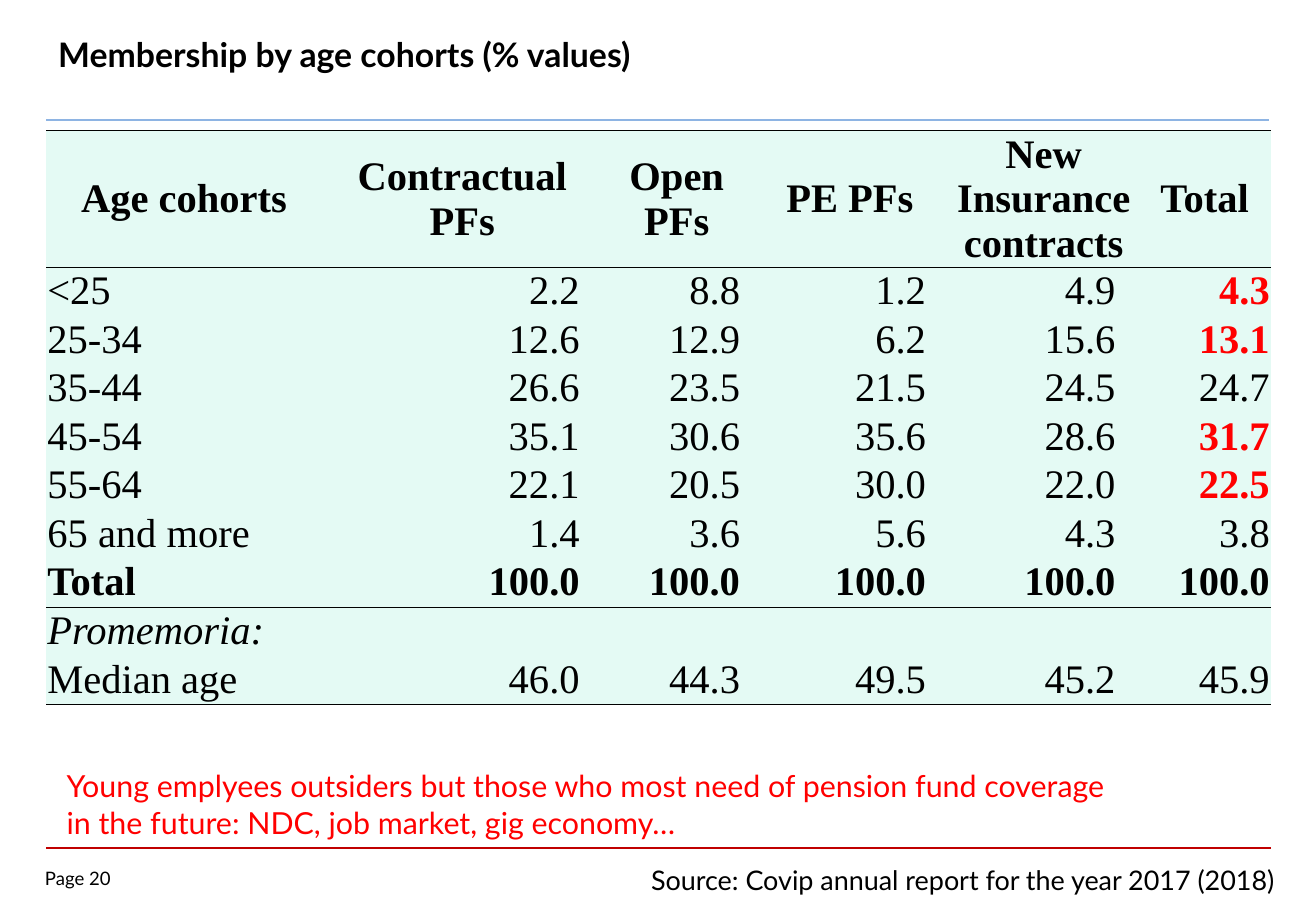
from dataclasses import dataclass

from lxml import etree
from pptx import Presentation
from pptx.dml.color import RGBColor
from pptx.enum import shapes, text
from pptx.oxml import ns
from pptx.util import Inches, Pt


@dataclass(frozen=True)
class Theme:
    """Colours, fonts and type sizes of the slide."""
    ink: str = "000000"
    accent: str = "FF0000"
    mint: str = "E4FAF4"
    top_rule: str = "8EB4E3"
    bottom_rule: str = "C00000"
    sans: str = "Lato"
    serif: str = "Times New Roman"
    title: int = 20
    table: int = 24
    note: int = 18
    source: int = 16
    page: int = 11
    border: float = 0.5


@dataclass(frozen=True)
class Caption:
    """A line of text with its place and look."""
    words: str
    left: float
    top: float
    width: float
    height: float
    size: int
    color: str
    bold: bool = False
    middle: bool = False
    padded: bool = True


@dataclass(frozen=True)
class Rule:
    """A horizontal rule across the slide."""
    left: float
    right: float
    top: float
    color: str
    weight: float


@dataclass(frozen=True)
class Column:
    """A table column with its width and right inset."""
    heading: str
    width: float
    inset: float


THEME = Theme()
RULES = [
    Rule(0.38, 10.46, 6.98, THEME.bottom_rule, 1),
    Rule(0.38, 10.44, 0.99, THEME.top_rule, 1.5),
]
CAPTIONS = [
    Caption("Page 20", 0.37, 7.14, 0.73, 0.22, THEME.page, THEME.ink, padded=False),
    Caption("Membership by age cohorts (% values)", 0.38, 0.09, 9.92, 0.71,
            THEME.title, THEME.ink, bold=True, middle=True),
    Caption("Source: Covip annual report for the year 2017 (2018)",
            5.26, 7.06, 5.67, 0.37, THEME.source, THEME.ink),
    Caption("Young emplyees outsiders but those who most need of pension fund coverage "
            "in the future: NDC, job market, gig economy…",
            0.45, 6.27, 8.98, 1.01, THEME.note, THEME.accent),
]
COLUMNS = [
    Column("Age cohorts", 2.27, 0.01),
    Column("Contractual PFs", 2.31, 0.19),
    Column("Open PFs", 1.22, 0.09),
    Column("PE PFs", 1.63, 0.19),
    Column("New Insurance contracts", 1.56, 0.19),
    Column("Total", 1.09, 0.01),
]
COHORTS = [
    ["<25", "2.2", "8.8", "1.2", "4.9", "4.3"],
    ["25-34", "12.6", "12.9", "6.2", "15.6", "13.1"],
    ["35-44", "26.6", "23.5", "21.5", "24.5", "24.7"],
    ["45-54", "35.1", "30.6", "35.6", "28.6", "31.7"],
    ["55-64", "22.1", "20.5", "30.0", "22.0", "22.5"],
    ["65 and more", "1.4", "3.6", "5.6", "4.3", "3.8"],
    ["Total", "100.0", "100.0", "100.0", "100.0", "100.0"],
    ["Promemoria:", "", "", "", "", ""],
    ["Median age", "46.0", "44.3", "49.5", "45.2", "45.9"],
]
HEADER_HEIGHT, ROW_HEIGHT = 1.13, 0.4
HIGHLIGHTED = {"4.3", "13.1", "31.7", "22.5"}
RULED_BELOW = {"Age cohorts", "Total", "Median age"}
RULED_ABOVE = {"Age cohorts", "<25", "Promemoria:"}


def style(paragraph, face: str, size: int, color: str, bold: bool, italic: bool = False) -> None:
    """Set the font of a whole paragraph."""
    font = paragraph.font
    font.name, font.size, font.bold, font.italic = face, Pt(size), bold, italic
    font.color.rgb = RGBColor.from_string(color)


def draw_rule(slide, rule: Rule) -> None:
    """Draw a horizontal rule without a shadow."""
    line = slide.shapes.add_connector(
        shapes.MSO_CONNECTOR.STRAIGHT, Inches(rule.left), Inches(rule.top),
        Inches(rule.right), Inches(rule.top))
    line.line.color.rgb = RGBColor.from_string(rule.color)
    line.line.width = Pt(rule.weight)
    etree.SubElement(line._element.spPr, ns.qn("a:effectLst"))


def draw_caption(slide, caption: Caption) -> None:
    """Draw a wrapped caption."""
    frame = slide.shapes.add_textbox(
        Inches(caption.left), Inches(caption.top),
        Inches(caption.width), Inches(caption.height)).text_frame
    frame.word_wrap = True
    if caption.middle:
        frame.vertical_anchor = text.MSO_ANCHOR.MIDDLE
    if not caption.padded:
        frame.margin_left = frame.margin_right = frame.margin_top = frame.margin_bottom = 0
    frame.text = caption.words
    style(frame.paragraphs[0], THEME.sans, caption.size, caption.color, caption.bold)


def set_borders(cell, above: bool, below: bool) -> None:
    """Rule a cell above or below and clear its other edges."""
    properties = cell._tc.get_or_add_tcPr()
    for edge, ruled in (("L", False), ("R", False), ("T", above), ("B", below)):
        border = etree.SubElement(properties, ns.qn(f"a:ln{edge}"), w=str(Pt(THEME.border)))
        fill = etree.SubElement(border, ns.qn("a:solidFill" if ruled else "a:noFill"))
        if ruled:
            etree.SubElement(fill, ns.qn("a:srgbClr"), val=THEME.ink)


def fill_cell(cell, words: str, label: str, column: Column, heading: bool) -> None:
    """Fill and format one table cell."""
    set_borders(cell, label in RULED_ABOVE, label in RULED_BELOW)
    cell.fill.solid()
    cell.fill.fore_color.rgb = RGBColor.from_string(THEME.mint)
    cell.margin_left = cell.margin_top = Inches(0.01)
    cell.margin_right = Inches(0.01 if heading else column.inset)
    cell.margin_bottom = 0
    cell.vertical_anchor = text.MSO_ANCHOR.MIDDLE if heading else text.MSO_ANCHOR.TOP
    cell.text = words
    paragraph = cell.text_frame.paragraphs[0]
    if heading:
        paragraph.alignment = text.PP_ALIGN.CENTER
    elif column is not COLUMNS[0]:
        paragraph.alignment = text.PP_ALIGN.RIGHT
    marked = column is COLUMNS[-1] and words in HIGHLIGHTED
    style(paragraph, THEME.serif, THEME.table, THEME.accent if marked else THEME.ink,
          heading or marked or label == "Total", label == "Promemoria:")


def draw_table(slide) -> None:
    """Draw the membership table."""
    rows = [[column.heading for column in COLUMNS], *COHORTS]
    width = sum(column.width for column in COLUMNS)
    height = HEADER_HEIGHT + ROW_HEIGHT * len(COHORTS)
    membership = slide.shapes.add_table(
        len(rows), len(COLUMNS), Inches(0.38), Inches(1.07),
        Inches(width), Inches(height)).table
    membership.first_row = membership.horz_banding = False
    for place, column in enumerate(COLUMNS):
        membership.columns[place].width = Inches(column.width)
    for line, values in enumerate(rows):
        membership.rows[line].height = Inches(ROW_HEIGHT if line else HEADER_HEIGHT)
        for place, (column, words) in enumerate(zip(COLUMNS, values)):
            fill_cell(membership.cell(line, place), words, values[0], column, line == 0)


def main() -> None:
    """Build and save the slide."""
    deck = Presentation()
    deck.slide_width, deck.slide_height = Inches(10.83), Inches(7.5)
    slide = deck.slides.add_slide(deck.slide_layouts[6])
    for rule in RULES:
        draw_rule(slide, rule)
    draw_table(slide)
    for caption in CAPTIONS:
        draw_caption(slide, caption)
    deck.save("out.pptx")


if __name__ == "__main__":
    main()
